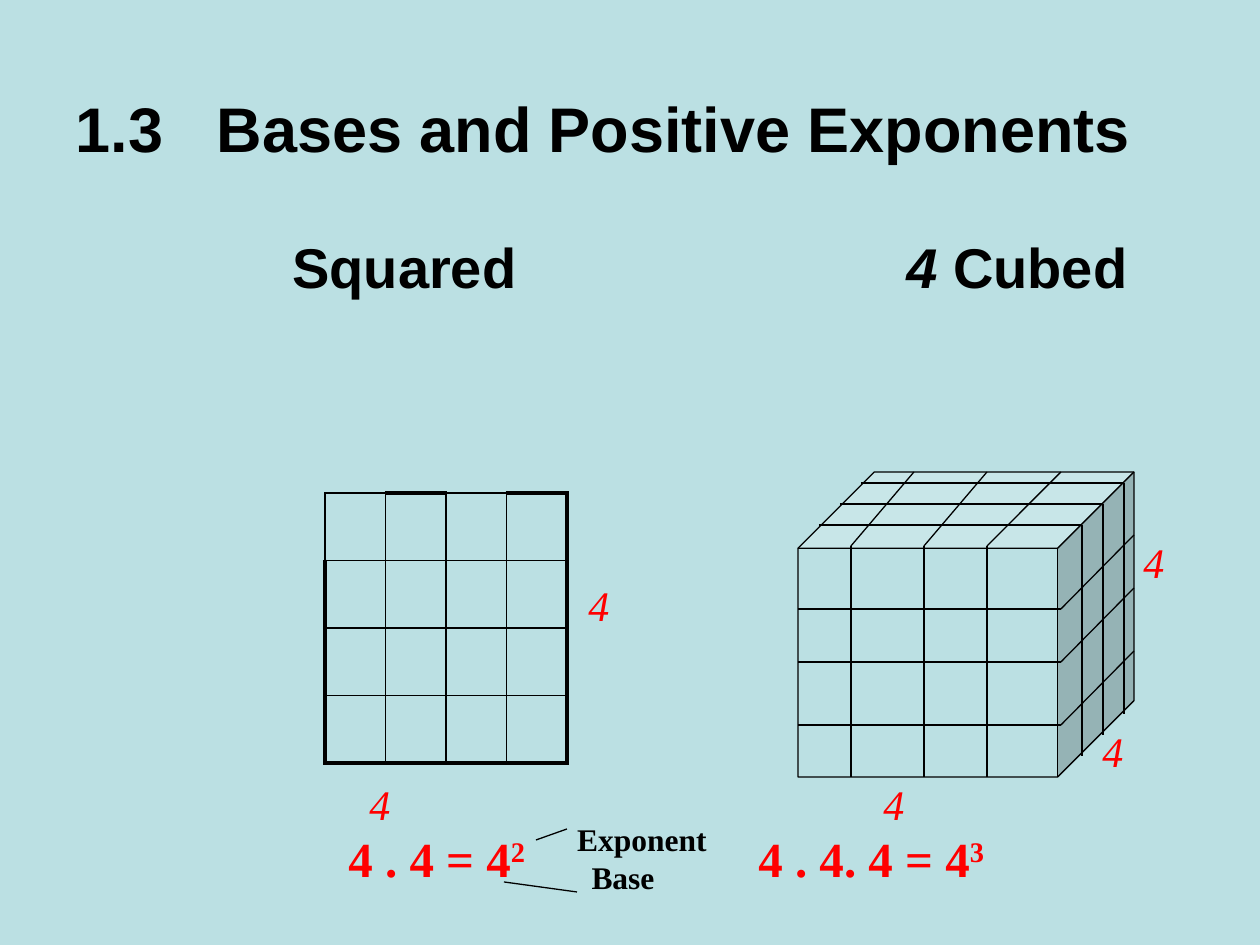
from dataclasses import dataclass

from lxml import etree
from pptx import Presentation
from pptx.dml.color import RGBColor
from pptx.enum.shapes import MSO_CONNECTOR, MSO_SHAPE
from pptx.enum.text import MSO_ANCHOR, PP_ALIGN
from pptx.oxml.ns import qn
from pptx.util import Emu, Pt

PX = 914400 // 126
STRAIGHT = MSO_CONNECTOR.STRAIGHT
CUBE = MSO_SHAPE.CUBE
MIDDLE, TOP = MSO_ANCHOR.MIDDLE, MSO_ANCHOR.TOP
LEFT, CENTER = PP_ALIGN.LEFT, PP_ALIGN.CENTER


@dataclass(frozen=True)
class Theme:
    ground: str = "BBE0E3"
    ink: str = "000000"
    accent: str = "FF0000"
    sans: str = "Arial"
    serif: str = "Times New Roman"
    title: int = 36
    heading: int = 32
    equation: int = 28
    side: int = 24
    label: int = 18
    thin: float = 0.75
    grid: float = 1
    frame: float = 2.25


THEME = Theme()


def write(paragraph, text, size, font=THEME.serif, color=THEME.ink, bold=False,
          italic=False, raised=False, align=LEFT, tabs=(), indent=0):
    """Add one run; tabs and indent are px from the left edge of the text."""
    paragraph.alignment = align
    props = paragraph._p.get_or_add_pPr()
    if indent:
        props.set("marL", str(indent * PX))
    if tabs:
        stops = etree.SubElement(props, qn("a:tabLst"))
        for stop in tabs:
            etree.SubElement(stops, qn("a:tab"), pos=str(stop * PX), algn="l")
    run = paragraph.add_run()
    run.text = text
    run.font.name, run.font.size = font, Pt(size)
    run.font.bold, run.font.italic = bold, italic
    run.font.color.rgb = RGBColor.from_string(color)
    if raised:
        run.font._element.set("baseline", "30000")


def draw_line(x1, y1, x2, y2):
    line = slide.shapes.add_connector(STRAIGHT, *(Emu(v * PX) for v in (x1, y1, x2, y2)))
    line.line.color.rgb = RGBColor.from_string(THEME.ink)
    line.line.width = Pt(THEME.thin)
    etree.SubElement(line._element.spPr, qn("a:effectLst"))


prs = Presentation()
prs.slide_width, prs.slide_height = Emu(1260 * PX), Emu(945 * PX)
slide = prs.slides.add_slide(prs.slide_layouts[5])
slide.background.fill.solid()
slide.background.fill.fore_color.rgb = RGBColor.from_string(THEME.ground)

# Title
title = slide.shapes.title
title.left, title.top, title.width, title.height = (Emu(v * PX) for v in (63, 38, 1134, 157))
title.text_frame.vertical_anchor = MIDDLE
title.text_frame.margin_top = Emu(28 * PX)
write(title.text_frame.paragraphs[0], "1.3\tBases and Positive Exponents", THEME.title,
      font=THEME.sans, bold=True, tabs=[141])

# Headings over the two figures
headings = slide.shapes.add_textbox(*(Emu(v * PX) for v in (63, 220, 1134, 624))).text_frame
headings.word_wrap = True
headings.vertical_anchor = TOP
headings.margin_top = Emu(12 * PX)
heading_style = dict(size=THEME.heading, font=THEME.sans, bold=True)
write(headings.paragraphs[0], "\tSquared\t", tabs=[217, 831], **heading_style)
write(headings.paragraphs[0], "4", italic=True, **heading_style)
write(headings.paragraphs[0], " Cubed", **heading_style)

# Square of 4 by 4 cells; the frame is broken along the top and left
N = 4
square = slide.shapes.add_table(N, N, *(Emu(v * PX) for v in (325, 493, 242, 270))).table
square.first_row = square.horz_banding = False
for row in range(N):
    for col in range(N):
        cell = square.cell(row, col)
        on_frame = {
            "a:lnL": col == 0 and row > 0,
            "a:lnR": col == N - 1,
            "a:lnT": row == 0 and col % 2 == 1,
            "a:lnB": row == N - 1,
        }
        cell_props = cell._tc.get_or_add_tcPr()
        for side, thick in on_frame.items():
            width = Pt(THEME.frame if thick else THEME.grid)
            border = etree.SubElement(cell_props, qn(side), w=str(width))
            fill = etree.SubElement(border, qn("a:solidFill"))
            etree.SubElement(fill, qn("a:srgbClr"), val=THEME.ink)
        cell.fill.background()

# Cube and the lines that divide its faces
cube_left, cube_right, cube_top, cube_bottom = 798, 1134, 472, 777
front_right, front_top = 1061, 546
cube = slide.shapes.add_shape(CUBE, *(Emu(v * PX) for v in (
    cube_left, cube_top, cube_right - cube_left, cube_bottom - cube_top)))
cube.adjustments[0] = 0.25
cube.shadow.inherit = False
cube.fill.solid()
cube.fill.fore_color.rgb = RGBColor.from_string(THEME.ground)
cube.line.color.rgb = RGBColor.from_string(THEME.ink)
cube.line.width = Pt(THEME.thin)

for y in (609, 662, 725):
    draw_line(cube_left, y, front_right, y)
    draw_line(front_right, y, cube_right, y - 74)
for x, back_x in ((851, 914), (924, 987), (987, 1061)):
    draw_line(x, front_top, x, cube_bottom)
    draw_line(x, front_top, back_x, cube_top)
for step in (21, 42, 63):
    x, y = cube_left + step, front_top - step
    draw_line(x, y, x + 263, y)
    draw_line(x + 263, y, x + 263, y + 231)

# Side lengths and equations under the figures
side_style = dict(size=THEME.side, color=THEME.accent, italic=True)
equation_style = dict(size=THEME.equation, color=THEME.accent, bold=True)
equations = slide.shapes.add_textbox(*(Emu(v * PX) for v in (336, 772, 714, 122))).text_frame
equations.word_wrap = True
write(equations.paragraphs[0], "\t4\t4", tabs=[21, 535], **side_style)
powers = equations.add_paragraph()
write(powers, "4 . 4 = 4", tabs=[410], **equation_style)
write(powers, "2", raised=True, **equation_style)
write(powers, "\t4 . 4. 4 = 4", **equation_style)
write(powers, "3", raised=True, **equation_style)

# Side lengths beside the figures
for x, y in ((576, 573), (1090, 719), (1131, 530)):
    side_length = slide.shapes.add_textbox(*(Emu(v * PX) for v in (x, y, 47, 63))).text_frame
    side_length.word_wrap = False
    write(side_length.paragraphs[0], "4", **side_style)

# Names of the parts of the power
draw_line(504, 882, 577, 892)
draw_line(536, 840, 567, 829)
part_names = slide.shapes.add_textbox(*(Emu(v * PX) for v in (500, 814, 246, 88))).text_frame
part_names.word_wrap = True
write(part_names.paragraphs[0], "Exponent", THEME.label, bold=True, align=CENTER, indent=38)
write(part_names.add_paragraph(), "Base", THEME.label, bold=True, align=CENTER)

prs.save("out.pptx")
